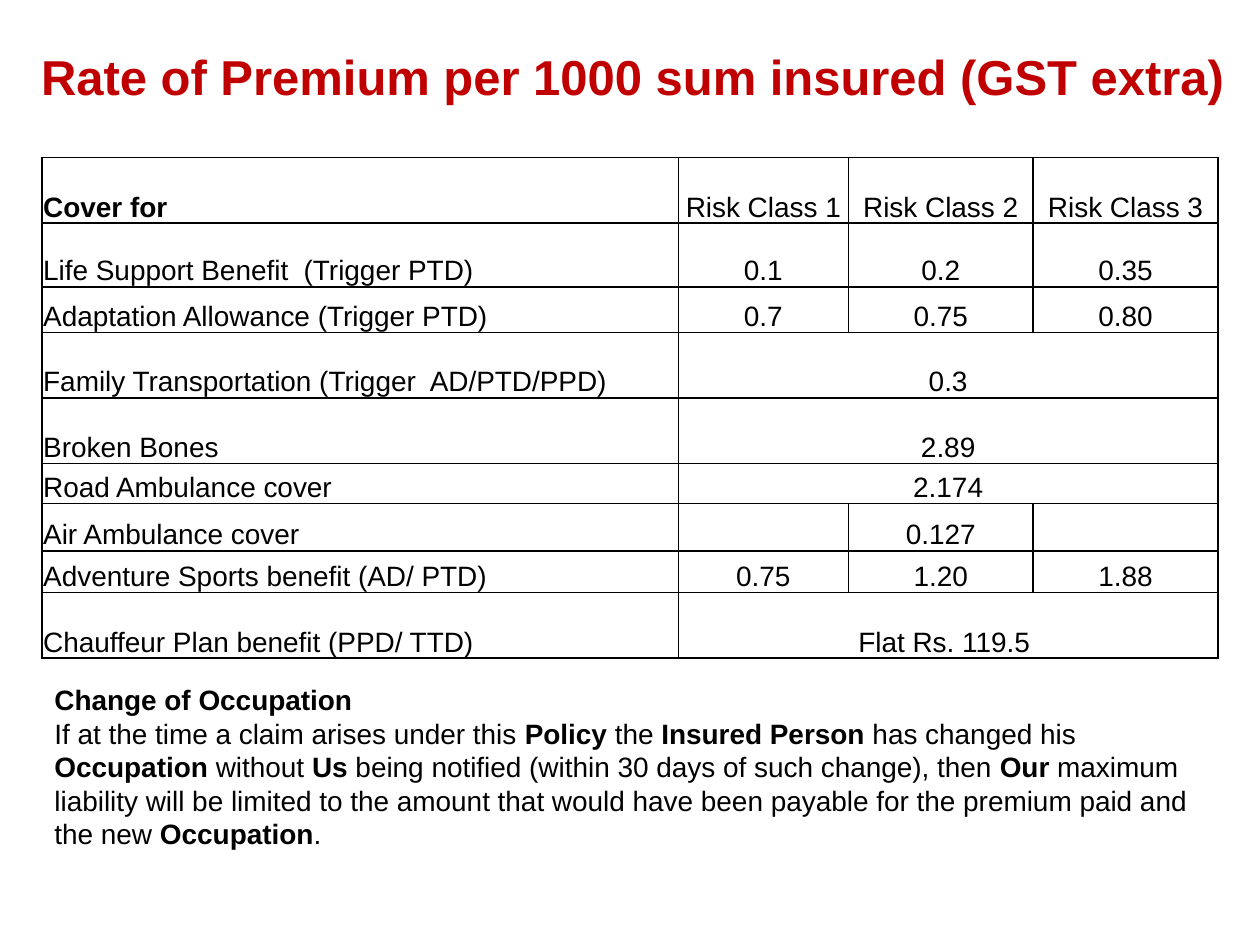
from lxml.etree import SubElement
from pptx import Presentation
from pptx.dml.color import RGBColor
from pptx.enum.text import MSO_ANCHOR as Anchor, PP_ALIGN as Align
from pptx.oxml.ns import qn
from pptx.util import Pt

FONT = "Arial"
COLORS = {"title": "C00000", "text": "000000", "border": "000000"}

COLUMN_WIDTHS = [363.6, 97.2, 105.6, 105.6]
# Row height, then the cells; a single value spans all risk classes
ROWS = [
    (37.5, ["Cover for", "Risk Class 1", "Risk Class 2", "Risk Class 3"]),
    (36.4, ["Life Support Benefit  (Trigger PTD)", "0.1", "0.2", "0.35"]),
    (26, ["Adaptation Allowance (Trigger PTD)", "0.7", "0.75", "0.80"]),
    (37.5, ["Family Transportation (Trigger  AD/PTD/PPD)", "0.3"]),
    (37.5, ["Broken Bones", "2.89"]),
    (23, ["Road Ambulance cover", "2.174"]),
    (27, ["Air Ambulance cover", "", "0.127", ""]),
    (23.8, ["Adventure Sports benefit (AD/ PTD)", "0.75", "1.20", "1.88"]),
    (37.5, ["Chauffeur Plan benefit (PPD/ TTD)", "Flat Rs. 119.5 "]),
]

# Paragraphs of (text, bold) runs
OCCUPATION_NOTE = [
    [("Change of Occupation", True)],
    [
        ("If at the time a claim arises under this ", False),
        ("Policy ", True),
        ("the ", False),
        ("Insured Person ", True),
        ("has changed his ", False),
        ("Occupation ", True),
        ("without ", False),
        ("Us ", True),
        ("being notified (within 30 days of such change), then ", False),
        ("Our ", True),
        ("maximum liability will be limited to the amount that would have "
         "been payable for the premium paid and the new ", False),
        ("Occupation", True),
        (".", False),
    ],
]


def format_run(r, size=16, color="text", bold=False):
    r.font.name = FONT
    r.font.size = Pt(size)
    r.font.bold = bold
    r.font.color.rgb = RGBColor.from_string(COLORS[color])


def set_borders(cell):
    tc_pr = cell._tc.get_or_add_tcPr()
    for side in ("a:lnL", "a:lnR", "a:lnT", "a:lnB"):
        ln = SubElement(tc_pr, qn(side), w=str(Pt(1)))
        fill = SubElement(ln, qn("a:solidFill"))
        SubElement(fill, qn("a:srgbClr"), val=COLORS["border"])


def add_title(slide, left, top, width, height):
    tf = slide.shapes.add_textbox(Pt(left), Pt(top), Pt(width), Pt(height)).text_frame
    tf.word_wrap = True
    tf.vertical_anchor = Anchor.MIDDLE
    tf.margin_left = Pt(23.5)
    tf.text = "Rate of Premium per 1000 sum insured (GST extra)"
    format_run(tf.paragraphs[0].runs[0], 28, "title", True)


def add_premium_table(slide, left, top, width, height):
    table = slide.shapes.add_table(
        len(ROWS), len(COLUMN_WIDTHS), Pt(left), Pt(top), Pt(width), Pt(height)
    ).table
    table.first_row = table.horz_banding = False
    for column, column_width in zip(table.columns, COLUMN_WIDTHS):
        column.width = Pt(column_width)

    for i, (row_height, texts) in enumerate(ROWS):
        table.rows[i].height = Pt(row_height)
        if len(texts) == 2:
            table.cell(i, 1).merge(table.cell(i, len(COLUMN_WIDTHS) - 1))
        for cell in table.rows[i].cells:
            set_borders(cell)
            cell.fill.background()
            cell.vertical_anchor = Anchor.BOTTOM
            cell.margin_left = cell.margin_right = cell.margin_top = Pt(0.7)
            cell.margin_bottom = Pt(0)
        for j, text in enumerate(texts):
            p = table.cell(i, j).text_frame.paragraphs[0]
            p.text = text
            p.alignment = Align.CENTER if j else Align.LEFT
            for r in p.runs:
                format_run(r, bold=i == j == 0)


def add_occupation_note(slide, left, top, width, height):
    tf = slide.shapes.add_textbox(Pt(left), Pt(top), Pt(width), Pt(height)).text_frame
    tf.word_wrap = True
    for i, runs in enumerate(OCCUPATION_NOTE):
        p = tf.add_paragraph() if i else tf.paragraphs[0]
        for text, bold in runs:
            r = p.add_run()
            r.text = text
            format_run(r, bold=bold)


def main():
    prs = Presentation()
    prs.slide_width, prs.slide_height = Pt(720), Pt(540)
    slide = prs.slides.add_slide(prs.slide_layouts[6])
    add_title(slide, 0, 14.4, 720, 57.6)
    add_premium_table(slide, 24, 90, 672, 286.2)
    add_occupation_note(slide, 24, 386.5, 672, 104.4)
    prs.save("out.pptx")


if __name__ == "__main__":
    main()
